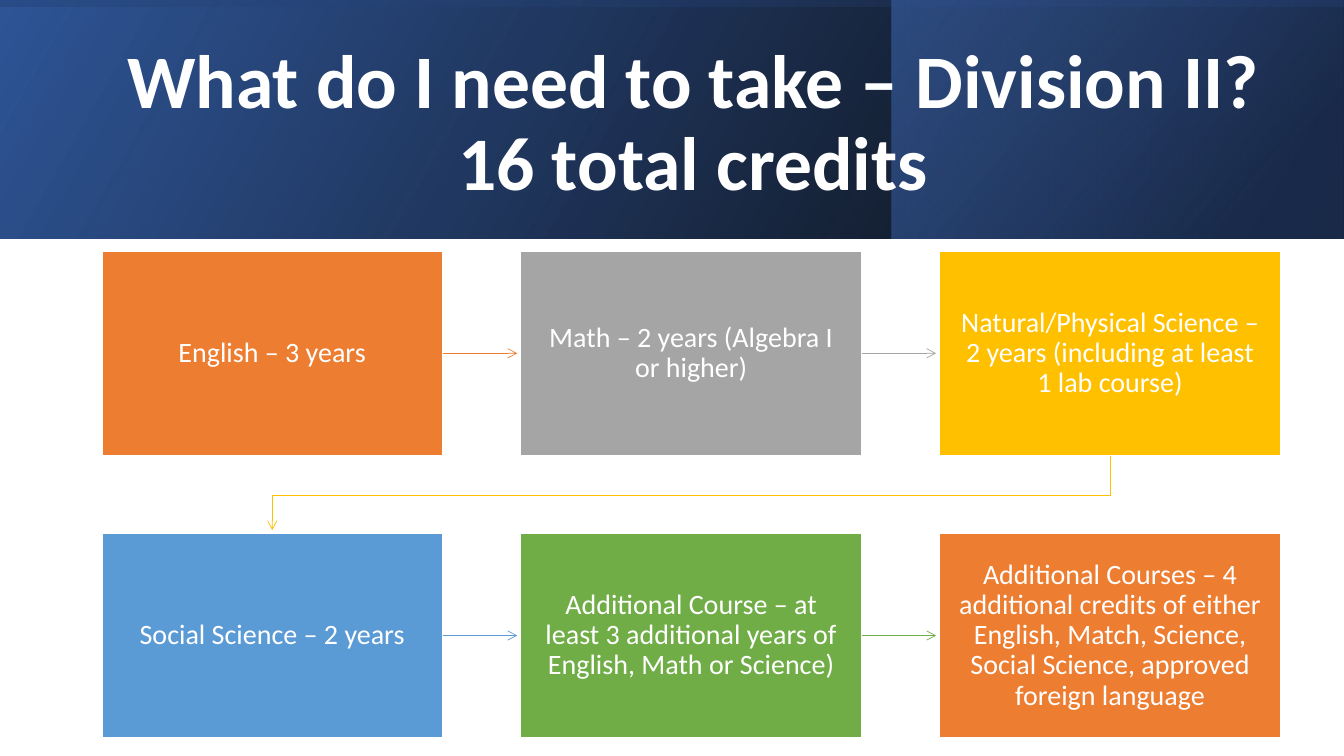
"""Builds the slide on Division II course credits."""
from lxml import etree
from pptx import Presentation
from pptx import util as u
from pptx.dml.color import RGBColor
from pptx.enum import shapes, text
from pptx.oxml import parse_xml
from pptx.oxml.ns import nsdecls, qn
from pptx.util import Inches

COLORS = {
    "white": "FFFFFF", "black": "000000", "navy": "2F5597", "deep": "203864",
    "royal": "4472C4", "orange": "ED7D31", "gray": "A5A5A5", "gold": "FFC000",
    "blue": "5B9BD5", "green": "70AD47",
}
FONT = "Calibri"
LEFT, TOP = 1.01, 2.49
BOX_W, BOX_H = 3.38, 2.03
STEP_X, STEP_Y = 4.155, 2.8
COLUMNS = 3
ARROW_W = 0.74
BANNER_H = 2.37

COURSES = [
    ("English – 3 years", "orange"),
    ("Math – 2 years (Algebra I or higher)", "gray"),
    ("Natural/Physical Science – 2 years (including at least 1 lab course)", "gold"),
    ("Social Science – 2 years", "blue"),
    ("Additional Course – at least 3 additional years of English, Math or Science)", "green"),
    ("Additional Courses – 4 additional credits of either English, Match, Science, "
     "Social Science, approved foreign language", "orange"),
]
BANNERS = [
    ((0, 0, 13.33, BANNER_H), 0, 330, [(0, "black", 96), (100, "navy", 100)]),
    ((8.84, 0, 4.48, BANNER_H), 0, 320, [(19, "deep", 68), (100, "royal", 48)]),
    ((5.48, -5.48, BANNER_H, 13.33), 270, 350, [(23, "navy", 16), (99, "black", 45)]),
]


def rgb(name):
    return RGBColor.from_string(COLORS[name])


def add_rect(s, box):
    sp = s.shapes.add_shape(shapes.MSO_SHAPE.RECTANGLE, *map(Inches, box))
    sp.shadow.inherit = False
    return sp


def add_banner(s, box, rotation, angle, stops):
    sp = add_rect(s, box)
    sp.rotation = rotation
    sp.line.fill.background()
    props = sp._element.spPr
    props.find(qn("a:xfrm")).set("flipH", "1")
    marks = "".join(
        f'<a:gs pos="{pos * 1000}"><a:srgbClr val="{COLORS[color]}">'
        f'<a:alpha val="{alpha * 1000}"/></a:srgbClr></a:gs>'
        for pos, color, alpha in stops)
    props.find(qn("a:prstGeom")).addnext(parse_xml(
        f'<a:gradFill rotWithShape="1" {nsdecls("a")}><a:gsLst>{marks}</a:gsLst>'
        f'<a:lin ang="{angle * 60000}" scaled="0"/></a:gradFill>'))


def add_run(p, words, size, bold=False):
    r = p.add_run()
    r.text = words
    r.font.name = FONT
    r.font.size = u.Pt(size)
    r.font.bold = bold
    r.font.color.rgb = rgb("white")


def center(tf):
    tf.word_wrap = True
    tf.auto_size = text.MSO_AUTO_SIZE.NONE
    tf.vertical_anchor = text.MSO_ANCHOR.MIDDLE
    p = tf.paragraphs[0]
    p.alignment = text.PP_ALIGN.CENTER
    p.line_spacing = 0.9
    return p


def set_title(s, lines):
    sp = s.shapes.title
    sp.left, sp.top, sp.width, sp.height = map(Inches, (0.97, 0.38, 11.81, 1.72))
    p = center(sp.text_frame)
    for i, line in enumerate(lines):
        if i:
            p.add_line_break()
        add_run(p, line, 54, True)
    sp._element.getparent().append(sp._element)


def add_course(s, x, y, words, color):
    sp = add_rect(s, (x, y, BOX_W, BOX_H))
    sp.fill.solid()
    sp.fill.fore_color.rgb = rgb(color)
    sp.line.color.rgb = rgb("white")
    sp.line.width = u.Pt(1)
    tf = sp.text_frame
    tf.margin_left = tf.margin_right = tf.margin_top = tf.margin_bottom = Inches(0.17)
    add_run(center(tf), words, 20)


def style_arrow(sp, color):
    sp.line.color.rgb = rgb(color)
    sp.line.width = u.Pt(0.5)
    etree.SubElement(sp.line._get_or_add_ln(), qn("a:tailEnd"), type="arrow")


def add_arrow(s, x, y, color):
    cx = s.shapes.add_connector(
        shapes.MSO_CONNECTOR.STRAIGHT, *map(Inches, (x, y, x + ARROW_W, y)))
    style_arrow(cx, color)
    etree.SubElement(cx._element.spPr, qn("a:effectLst"))


def add_row_arrow(s, x, y, color):
    end_x, mid_y, end_y = LEFT + BOX_W / 2, y + 0.39, y + 0.74
    points = [(x, y), (x, mid_y), (end_x, mid_y), (end_x, end_y)]
    start, *rest = [tuple(map(Inches, point)) for point in points]
    builder = s.shapes.build_freeform(*start)
    builder.add_line_segments(rest, close=False)
    sp = builder.convert_to_shape()
    sp.shadow.inherit = False
    sp.fill.background()
    style_arrow(sp, color)


def main():
    prs = Presentation()
    prs.slide_width, prs.slide_height = Inches(13.33), Inches(7.5)
    s = prs.slides.add_slide(prs.slide_layouts[5])
    for banner in BANNERS:
        add_banner(s, *banner)
    set_title(s, ["What do I need to take – Division II?", "16 total credits"])
    for i, (words, color) in enumerate(COURSES):
        row, col = divmod(i, COLUMNS)
        x, y = LEFT + col * STEP_X, TOP + row * STEP_Y
        add_course(s, x, y, words, color)
        if col < COLUMNS - 1:
            add_arrow(s, x + BOX_W, y + BOX_H / 2, color)
        elif i < len(COURSES) - 1:
            add_row_arrow(s, x + BOX_W / 2, y + BOX_H, color)
    prs.save("out.pptx")


if __name__ == "__main__":
    main()
